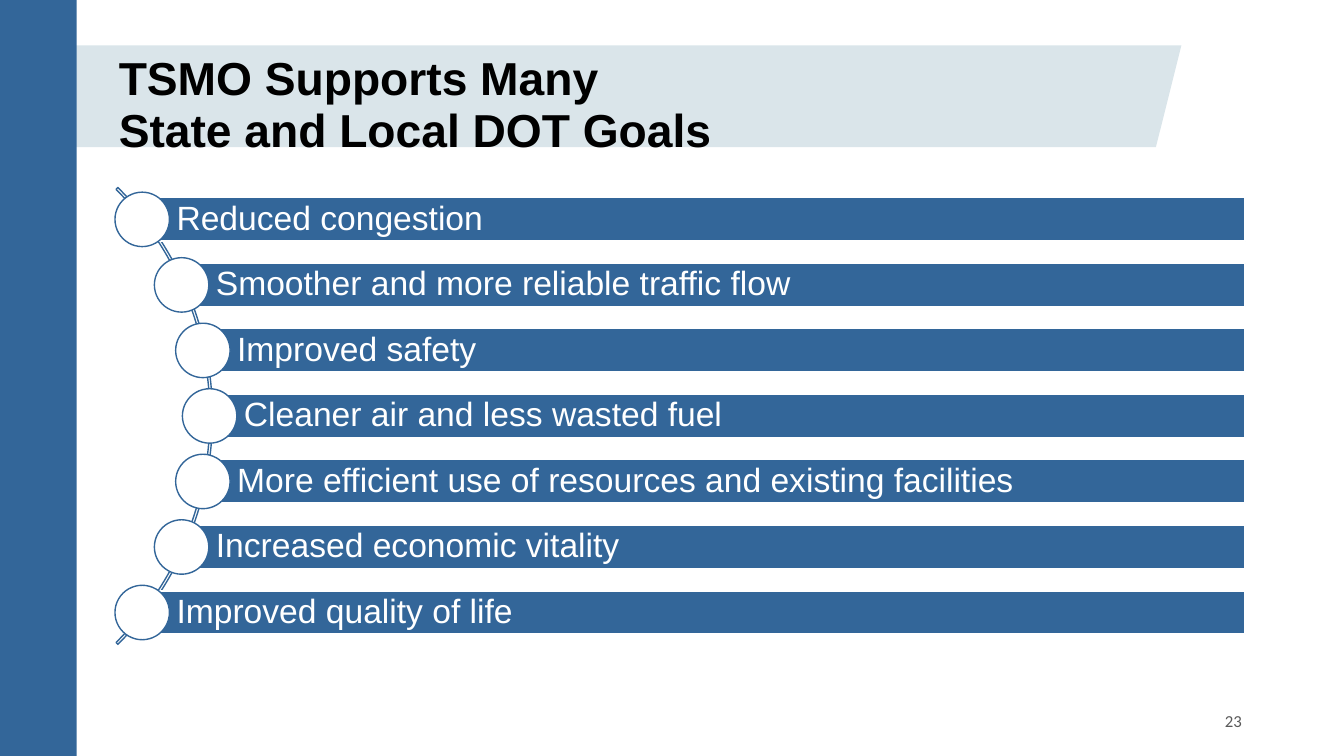
import dataclasses
import math

import pptx
import pptx.dml.color
import pptx.enum.shapes
import pptx.enum.text
import pptx.util

Shape = pptx.enum.shapes.MSO_SHAPE
Anchor = pptx.enum.text.MSO_ANCHOR
Align = pptx.enum.text.PP_ALIGN

COLUMNS = 40
SLIDE_WIDTH = pptx.util.Emu(12192000)
SLIDE_HEIGHT = pptx.util.Inches(7.5)
CELL = SLIDE_WIDTH / COLUMNS

BLUE = "336699"
WHITE = "FFFFFF"

ARC_CENTER_COLUMN = -3.29
ARC_CENTER_ROW = 12.38
ARC_DIAMETER = 19.23
DOT_PATH_RADIUS = 9.53
DOT_SIZE = 1.62
BAR_HEIGHT = 1.29
BAR_PITCH = 1.95
BAR_RIGHT = 37.06
BAR_INSETS = (1.02, 0.21, 0.21, 0.21)


@dataclasses.dataclass(frozen=True)
class Area:
    column: float
    row: float
    columns: float
    rows: float

    def lengths(self) -> list[int]:
        return [cells(value) for value in dataclasses.astuple(self)]


@dataclasses.dataclass(frozen=True)
class Goal:
    label: str
    step: int

    @property
    def center_row(self) -> float:
        return ARC_CENTER_ROW + self.step * BAR_PITCH

    @property
    def center_column(self) -> float:
        rise = self.step * BAR_PITCH
        return ARC_CENTER_COLUMN + math.sqrt(DOT_PATH_RADIUS**2 - rise**2)


GOALS = [
    Goal("Reduced congestion", -3),
    Goal("Smoother and more reliable traffic flow", -2),
    Goal("Improved safety", -1),
    Goal("Cleaner air and less wasted fuel", 0),
    Goal("More efficient use of resources and existing facilities", 1),
    Goal("Increased economic vitality", 2),
    Goal("Improved quality of life", 3),
]


def cells(count: float) -> int:
    return round(count * CELL)


def color(value: str) -> pptx.dml.color.RGBColor:
    return pptx.dml.color.RGBColor.from_string(value)


def add_figure(page, kind, area: Area, fill: str | None = None, line: str | None = None):
    figure = page.shapes.add_shape(kind, *area.lengths())
    figure.shadow.inherit = False
    if fill:
        figure.fill.solid()
        figure.fill.fore_color.rgb = color(fill)
    else:
        figure.fill.background()
    if line:
        figure.line.color.rgb = color(line)
        figure.line.width = pptx.util.Pt(1)
    else:
        figure.line.fill.background()
    return figure


def write(box, text: str, *, size: float, ink: str, font: str = "Arial",
          bold: bool = False, align=Align.LEFT, anchor=Anchor.MIDDLE,
          spacing: float = 1.0, insets=(0.3, 0.15, 0.3, 0.15)) -> None:
    frame = box.text_frame
    frame.word_wrap = True
    frame.vertical_anchor = anchor
    (frame.margin_left, frame.margin_top,
     frame.margin_right, frame.margin_bottom) = map(cells, insets)
    para = frame.paragraphs[0]
    para.text = text
    para.alignment = align
    para.line_spacing = spacing
    for span in para.runs:
        span.font.name = font
        span.font.size = pptx.util.Pt(size)
        span.font.bold = bold
        span.font.color.rgb = color(ink)


def add_text(page, area: Area, text: str, **style) -> None:
    write(page.shapes.add_textbox(*area.lengths()), text, **style)


def add_goal(page, goal: Goal) -> None:
    left = goal.center_column
    bar = add_figure(
        page, Shape.RECTANGLE,
        Area(left, goal.center_row - BAR_HEIGHT / 2, BAR_RIGHT - left, BAR_HEIGHT),
        fill=BLUE, line=WHITE)
    write(bar, goal.label, size=24, ink=WHITE, spacing=0.9, insets=BAR_INSETS)
    add_figure(
        page, Shape.OVAL,
        Area(left - DOT_SIZE / 2, goal.center_row - DOT_SIZE / 2, DOT_SIZE, DOT_SIZE),
        fill=WHITE, line=BLUE)


def add_arc(page) -> None:
    radius = ARC_DIAMETER / 2
    arc = add_figure(
        page, Shape.BLOCK_ARC,
        Area(ARC_CENTER_COLUMN - radius, ARC_CENTER_ROW - radius,
             ARC_DIAMETER, ARC_DIAMETER),
        line=BLUE)
    for index, value in enumerate((189, 27, 0.004)):
        arc.adjustments[index] = value


def main() -> None:
    deck = pptx.Presentation()
    deck.slide_width = SLIDE_WIDTH
    deck.slide_height = SLIDE_HEIGHT
    page = deck.slides.add_slide(deck.slide_layouts[6])

    add_figure(page, Shape.PARALLELOGRAM, Area(0.72, 1.35, 34.44, 3.03), fill="DAE5EA")
    add_figure(page, Shape.RECTANGLE, Area(0, 0, 2.28, SLIDE_HEIGHT / CELL), fill=BLUE)
    add_text(page, Area(3.24, 1.44, 31.95, 1.65),
             "TSMO Supports Many\vState and Local DOT Goals",
             size=33, ink="000000", bold=True, anchor=Anchor.TOP, spacing=0.94)
    add_arc(page)
    for goal in GOALS:
        add_goal(page, goal)
    add_text(page, Area(28.26, 20.85, 9, 1.2), "23",
             size=12, ink="595959", font="Calibri", align=Align.RIGHT)

    deck.save("out.pptx")


if __name__ == "__main__":
    main()
